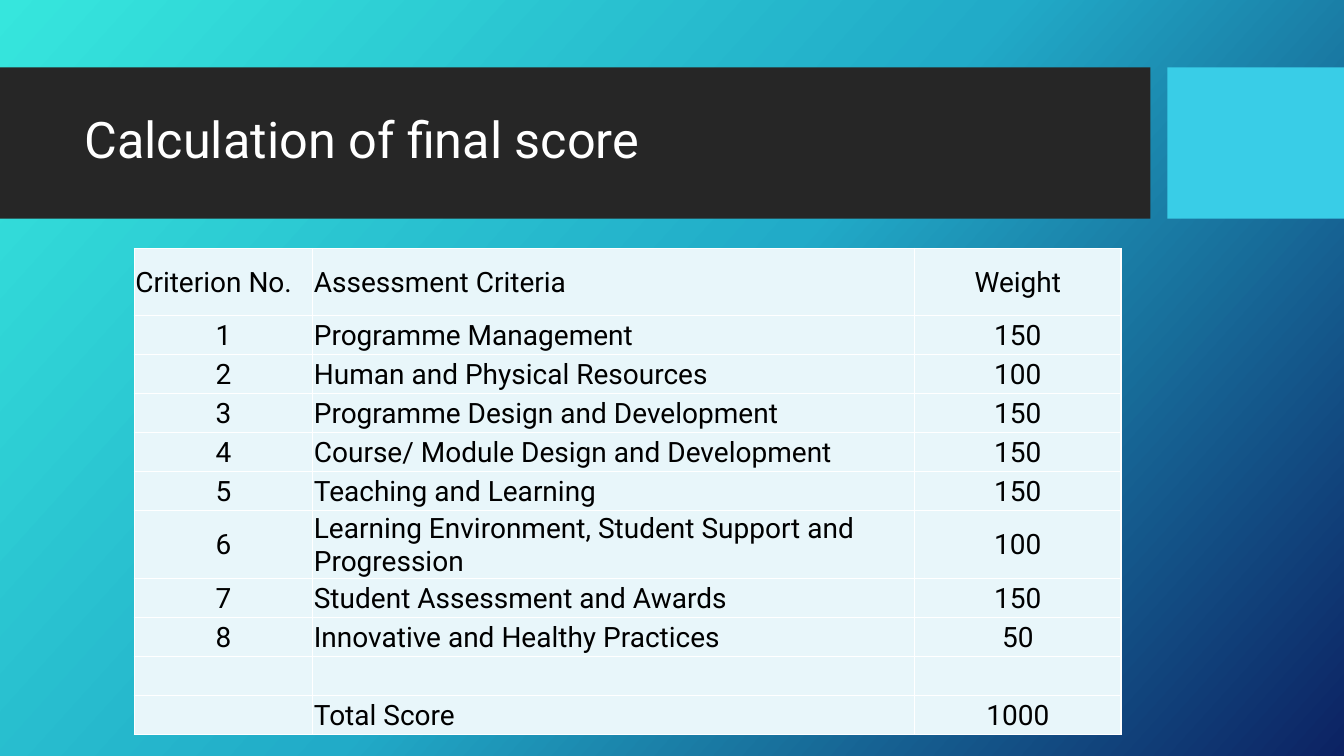
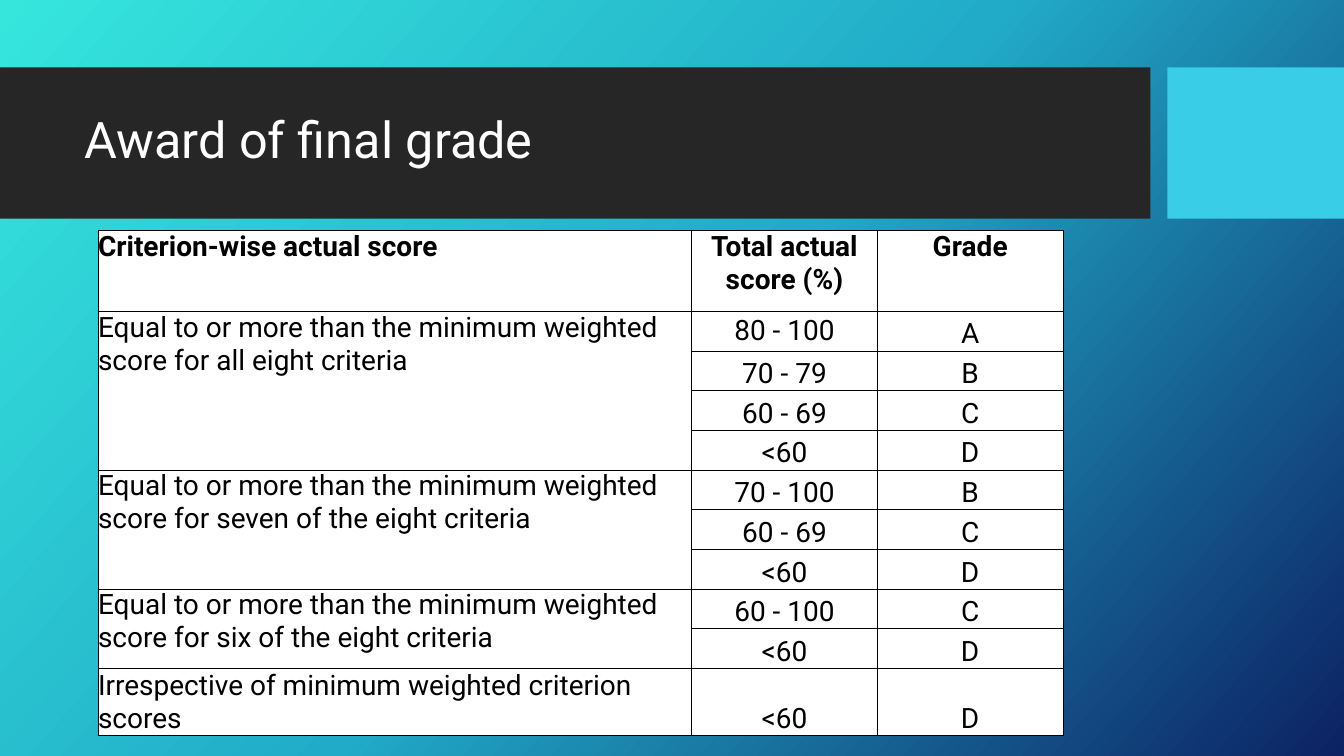
from copy import deepcopy
from dataclasses import dataclass

from lxml.etree import SubElement
from pptx import Presentation
from pptx.dml.color import RGBColor as RGB
from pptx.enum.shapes import MSO_SHAPE as SHAPE
from pptx.enum.text import MSO_ANCHOR as ANCHOR, PP_ALIGN as ALIGN
from pptx.oxml.ns import qn
from pptx.util import Cm, Pt


@dataclass(frozen=True)
class Theme:
    """Colours, font and type sizes of the deck."""
    font: str = "Roboto"
    title_size: int = 36
    body_size: int = 20
    backdrop: tuple = ((0, "36E6DD"), (0.5, "21ABC8"), (1, "0C2263"))
    angle: int = 42
    band: str = "262626"
    accent: str = "39CDE7"
    light: str = "FFFFFF"
    dark: str = "000000"
    tint: str = "E8F6FA"


T = Theme()
WIDTH, HEIGHT = 33.87, 19.05
HEADER = (0, 1.7, WIDTH, 3.81)

SCORE_ROWS = [
    ("Criterion No.", "Assessment Criteria", "Weight"),
    ("1", "Programme Management", "150"),
    ("2", "Human and Physical Resources", "100"),
    ("3", "Programme Design and Development", "150"),
    ("4", "Course/ Module Design and Development", "150"),
    ("5", "Teaching and Learning", "150"),
    ("6", "Learning Environment, Student Support and Progression", "100"),
    ("7", "Student Assessment and Awards", "150"),
    ("8", "Innovative and Healthy Practices", "50"),
    ("", "", ""),
    ("", "Total Score", "1000"),
]
GRADE_HEAD = ("Criterion-wise actual score", "Total actual score (%)", "Grade")
GRADE_GROUPS = [
    ("Equal to or more than the minimum weighted score for all eight criteria",
     [("80 - 100", "A"), ("70 - 79", "B"), ("60 - 69", "C"), ("<60", "D")]),
    ("Equal to or more than the minimum weighted score for seven of the eight criteria",
     [("70 - 100", "B"), ("60 - 69", "C"), ("<60", "D")]),
    ("Equal to or more than the minimum weighted score for six of the eight criteria",
     [("60 - 100", "C"), ("<60", "D")]),
    ("Irrespective of minimum weighted criterion scores", [("<60", "D")]),
]


def apply(obj, **values):
    """Set each given attribute on an object."""
    for name, value in values.items():
        setattr(obj, name, value)


def write(tf, text, size, color, align=ALIGN.LEFT, bold=False):
    """Write one formatted paragraph and return it."""
    p = tf.paragraphs[0]
    p.alignment = align
    if text:
        r = p.add_run()
        r.text = text
        apply(r.font, name=T.font, size=Pt(size), bold=bold)
        r.font.color.rgb = RGB.from_string(color)
    return p


def paint_backdrop(master):
    """Give the master the diagonal gradient."""
    fill = master.background.fill
    fill.gradient()
    fill.gradient_angle = 360 - T.angle
    stops = next(master.element.iter(qn("a:gsLst")))
    stops.insert(1, deepcopy(stops[0]))
    for stop, (position, color) in zip(fill.gradient_stops, T.backdrop):
        stop.position = position
        stop.color.rgb = RGB.from_string(color)


def add_block(s, box, color):
    """Add a plain rectangle."""
    sp = s.shapes.add_shape(SHAPE.RECTANGLE, *map(Cm, box))
    sp.shadow.inherit = False
    sp.fill.solid()
    sp.fill.fore_color.rgb = RGB.from_string(color)
    sp.line.fill.background()


def add_header(s, box, title):
    """Add the title band and the accent block at its right."""
    x, y, w, h = box
    accent_w, gap = 4.45, 0.43
    band_w = w - accent_w - gap
    add_block(s, (x, y, band_w, h), T.band)
    add_block(s, (x + w - accent_w, y, accent_w, h), T.accent)
    sp = s.shapes.add_textbox(Cm(x + 1.88), Cm(y + 0.38), Cm(band_w - 2.28), Cm(3))
    tf = sp.text_frame
    apply(tf, word_wrap=True, vertical_anchor=ANCHOR.MIDDLE)
    write(tf, title, T.title_size, T.light).line_spacing = 0.9


def add_borders(cell, color, width):
    """Draw the four borders of a cell."""
    tc_pr = cell._tc.get_or_add_tcPr()
    for side in ("lnL", "lnR", "lnT", "lnB"):
        ln = SubElement(tc_pr, qn(f"a:{side}"), w=str(Pt(width)))
        SubElement(SubElement(ln, qn("a:solidFill")), qn("a:srgbClr"), val=color)


def add_grid(s, origin, cols, rows, fill, border, margin):
    """Add an empty table with uniform cells and return it."""
    size = (sum(cols), sum(rows))
    table = s.shapes.add_table(len(rows), len(cols), *map(Cm, origin + size)).table
    apply(table, first_row=False, horz_banding=False)
    for col, width in zip(table.columns, cols):
        col.width = Cm(width)
    for row, height in zip(table.rows, rows):
        row.height = Cm(height)
    for cell in table.iter_cells():
        add_borders(cell, *border)
        cell.fill.solid()
        cell.fill.fore_color.rgb = RGB.from_string(fill)
        apply(cell, margin_left=Cm(margin), margin_right=Cm(margin),
              margin_top=Cm(margin), margin_bottom=0)
    return table


def fill_cell(cell, text, align, anchor, bold=False):
    """Write a table cell."""
    cell.vertical_anchor = anchor
    write(cell.text_frame, text, T.body_size, T.dark, align, bold)


def add_score_table(s, origin):
    """Add the weights of the criteria."""
    heights = [1.7] + [0.98] * 5 + [1.67] + [0.98] * 4
    table = add_grid(s, origin, (4.5, 15.17, 5.2), heights, T.tint, (T.light, 1), 0.03)
    for i, row in enumerate(SCORE_ROWS):
        for j, text in enumerate(row):
            left = j == 1 or (i, j) == (0, 0)
            fill_cell(table.cell(i, j), text, ALIGN.LEFT if left else ALIGN.CENTER,
                      ANCHOR.MIDDLE)


def add_grade_table(s, origin):
    """Add the grades, grouped by criterion-wise score."""
    heights = [2.04] + [1] * 9 + [1.67]
    table = add_grid(s, origin, (14.96, 4.68, 4.68), heights, T.light, (T.dark, 0.5), 0)
    for j, text in enumerate(GRADE_HEAD):
        fill_cell(table.cell(0, j), text, ALIGN.CENTER if j else ALIGN.LEFT,
                  ANCHOR.TOP, True)
    i = 1
    for label, grades in GRADE_GROUPS:
        cell, count = table.cell(i, 0), len(grades)
        if count > 1:
            cell.merge(table.cell(i + count - 1, 0))
        fill_cell(cell, label, ALIGN.LEFT, ANCHOR.TOP if count > 1 else ANCHOR.BOTTOM)
        for row in grades:
            for j, text in enumerate(row, 1):
                anchor = ANCHOR.MIDDLE if (i, j) == (1, 1) else ANCHOR.BOTTOM
                fill_cell(table.cell(i, j), text, ALIGN.CENTER, anchor)
            i += 1


def main():
    """Build and save the deck."""
    prs = Presentation()
    apply(prs, slide_width=Cm(WIDTH), slide_height=Cm(HEIGHT))
    paint_backdrop(prs.slide_master)
    for title, add_table, origin in (
        ("Calculation of final score", add_score_table, (3.38, 6.26)),
        ("Award of final grade", add_grade_table, (2.47, 5.8)),
    ):
        s = prs.slides.add_slide(prs.slide_layouts[6])
        add_header(s, HEADER, title)
        add_table(s, origin)
    prs.save("out.pptx")


if __name__ == "__main__":
    main()
